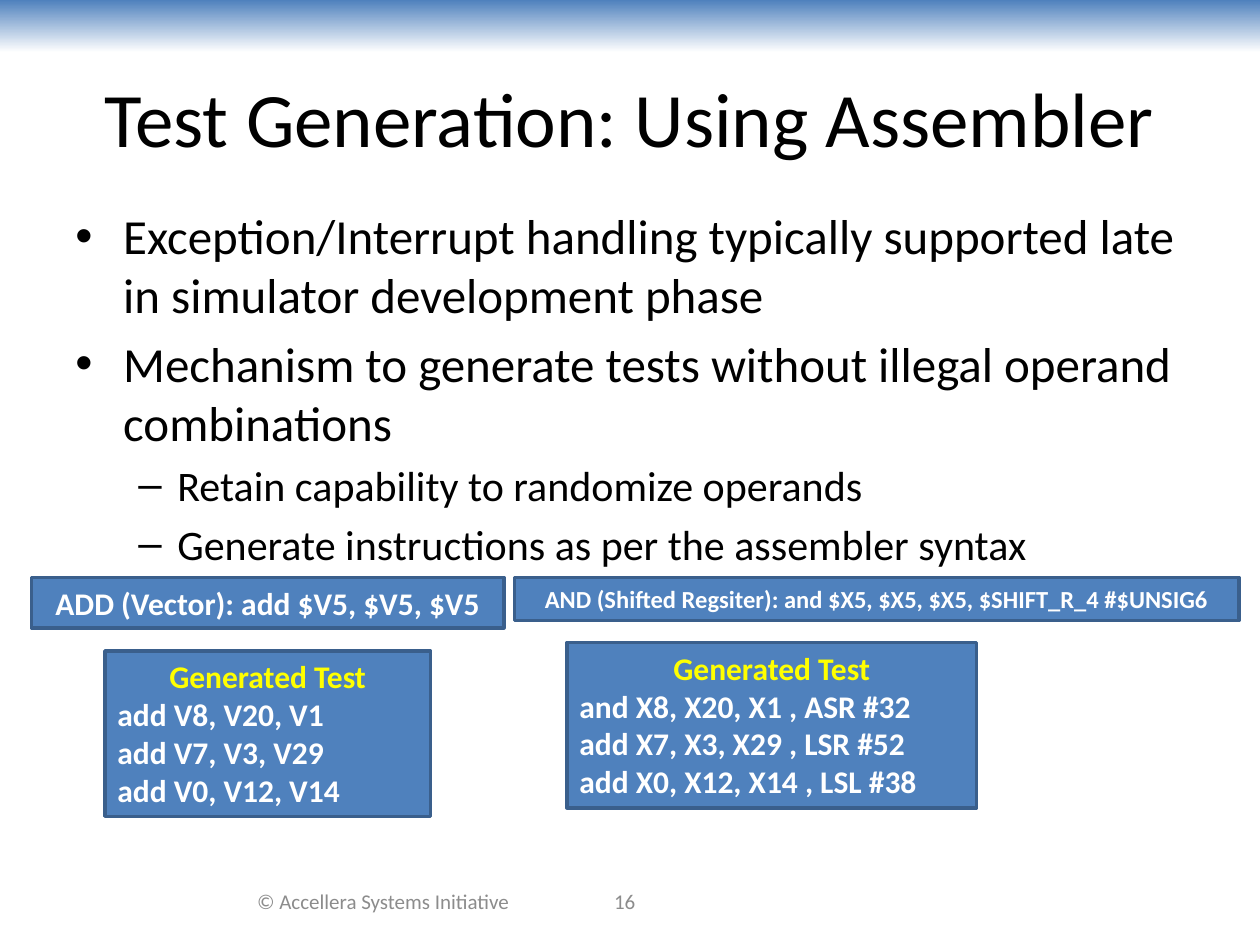
from lxml.etree import SubElement as Sub
from pptx import Presentation
from pptx.dml.color import RGBColor as RGB
from pptx.enum.shapes import MSO_SHAPE as Form
from pptx.enum.text import MSO_ANCHOR as Anchor, MSO_AUTO_SIZE as Fit, PP_ALIGN as Align
from pptx.oxml.ns import qn
from pptx.util import Inches, Pt

HUES = {"blue": "4F81BD", "edge": "3A5F8C", "white": "FFFFFF",
        "black": "000000", "gold": "FFFF00", "gray": "8C8C8C"}

deck = Presentation()
deck.slide_width, deck.slide_height = Inches(10), Inches(7.5)
slide = deck.slides.add_slide(deck.slide_layouts[5])
shapes = slide.shapes
col = deck.slide_width / 120
row = deck.slide_height / 90


def grid(x, y, w, h):
    return [round(n) for n in (x * col, y * row, w * col, h * row)]


def write(para, text, size, hue, bold=False, align=Align.LEFT):
    para.alignment = align
    run = para.add_run()
    run.text = text
    font = run.font
    font.name, font.size, font.bold = "Calibri", Pt(size), bold
    font.color.rgb = RGB.from_string(HUES[hue])


band = shapes.add_shape(Form.RECTANGLE, *grid(0, 0, 120, 5))
band.shadow.inherit = False
band.line.fill.background()
band.fill.gradient()
band.fill.gradient_angle = 270
for stop, hue, place in zip(band.fill.gradient_stops, ("blue", "white"), (0, 1)):
    stop.color.rgb = RGB.from_string(HUES[hue])
    stop.position = place
shapes.element.insert(2, band.element)

title = shapes.title
title.left, title.top, title.width, title.height = grid(6, 3.6, 108, 15)
title.text_frame.vertical_anchor = Anchor.MIDDLE
write(title.text_frame.paragraphs[0], "Test Generation: Using Assembler", 44, "black", align=Align.CENTER)

points = [
    (0, "Exception/Interrupt handling typically supported late in simulator development phase"),
    (0, "Mechanism to generate tests without illegal operand combinations"),
    (1, "Retain capability to randomize operands"),
    (1, "Generate instructions as per the assembler syntax"),
]
styles = [("•", 28, 0.38, 0.38), ("–", 24, 0.81, 0.31)]
frame = shapes.add_textbox(*grid(6, 19, 108, 36)).text_frame
frame.word_wrap = True
for i, (level, text) in enumerate(points):
    mark, size, left, hang = styles[level]
    para = frame.paragraphs[0] if i == 0 else frame.add_paragraph()
    para.level = level
    props = para._p.get_or_add_pPr()
    props.set("marL", str(Inches(left)))
    props.set("indent", str(-Inches(hang)))
    Sub(props, qn("a:buFont")).set("typeface", "Arial")
    Sub(props, qn("a:buChar")).set("char", mark)
    para.space_before = Pt(size * 0.2 if i else 0)
    write(para, text, size, "black")

for x, w, text in [(22, 29, "© Accellera Systems Initiative"), (48, 23, "16")]:
    frame = shapes.add_textbox(*grid(x, 83.4, w, 4.8)).text_frame
    frame.word_wrap = True
    frame.vertical_anchor = Anchor.MIDDLE
    write(frame.paragraphs[0], text, 12, "gray", align=Align.CENTER)

head = "Generated Test"
boxes = [
    ((3, 55, 45, 4.8), 18, ["ADD (Vector): add $V5, $V5, $V5"]),
    ((10, 62, 31, 15.75), 18, [head, "add V8, V20, V1", "add V7, V3, V29", "add V0, V12, V14"]),
    ((49, 55, 69, 4.1), 14, ["AND (Shifted Regsiter): and $X5, $X5, $X5, $SHIFT_R_4 #$UNSIG6"]),
    ((54, 61.2, 39, 15.75), 18, [head, "and X8, X20, X1 , ASR #32",
                                 "add X7, X3, X29 , LSR #52", "add X0, X12, X14 , LSL #38"]),
]
for area, size, lines in boxes:
    box = shapes.add_shape(Form.RECTANGLE, *grid(*area))
    box.shadow.inherit = False
    box.fill.solid()
    box.fill.fore_color.rgb = RGB.from_string(HUES["blue"])
    box.line.color.rgb = RGB.from_string(HUES["edge"])
    box.line.width = Pt(2)
    frame = box.text_frame
    frame.word_wrap = True
    frame.auto_size = Fit.SHAPE_TO_FIT_TEXT
    frame.vertical_anchor = Anchor.TOP
    for i, text in enumerate(lines):
        para = frame.paragraphs[0] if i == 0 else frame.add_paragraph()
        write(para, text, size, "gold" if text == head else "white", True,
              Align.LEFT if i else Align.CENTER)

deck.save("out.pptx")
